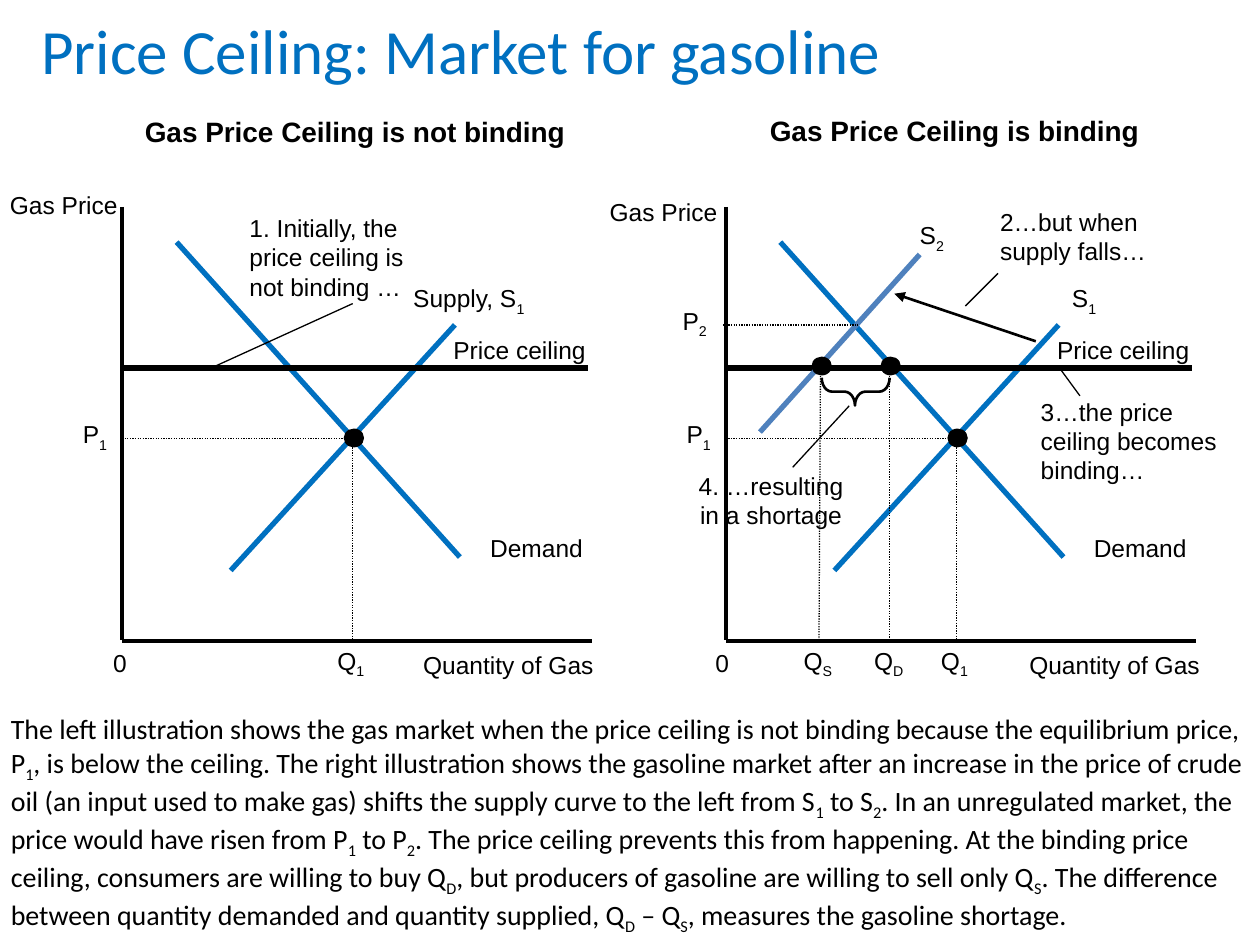
import pptx
import pptx.util
import pptx.dml.color
import pptx.enum.dml
import pptx.enum.shapes
import pptx.enum.text
from pptx.oxml.ns import qn
from lxml import etree

Cm, Pt = pptx.util.Cm, pptx.util.Pt
ALIGN = pptx.enum.text.PP_ALIGN
SHAPE = pptx.enum.shapes.MSO_SHAPE

# Content: lengths in cm; "_" makes the next character a subscript
TITLE = "Price Ceiling: Market for gasoline"
SUMMARY = (
    "The left illustration shows the gas market when the price ceiling is not binding "
    "because the equilibrium price, P_1, is below the ceiling. The right illustration shows "
    "the gasoline market after an increase in the price of crude oil (an input used to make "
    "gas) shifts the supply curve to the left from S_1 to S_2. In an unregulated market, the "
    "price would have risen from P_1 to P_2. The price ceiling prevents this from happening. "
    "At the binding price ceiling, consumers are willing to buy Q_D, but producers of gasoline "
    "are willing to sell only Q_S. The difference between quantity demanded and quantity "
    "supplied, Q_D – Q_S, measures the gasoline shortage."
)
BLACK, BLUE, PALE_BLUE = "000000", "0070C0", "4F81BD"
PANEL_STEP = 12.17
LABEL_H = 0.86
DOT_W, DOT_H = 0.41, 0.38

# Line styles: colour, width in points, dotted, arrowhead
STYLES = {
    "axis": (BLACK, 2.25, False, False),
    "curve": (BLUE, 3, False, False),
    "new supply": (PALE_BLUE, 3, False, False),
    "ceiling": (BLACK, 3, False, False),
    "guide": (BLACK, 0.75, True, False),
    "leader": (BLACK, 0.75, False, False),
    "shift": (BLACK, 1.5, False, True),
}

# Parts of both panels, placed for the left one
PANEL_LINES = [
    ("axis", 2.46, 4.17, 2.46, 12.9),
    ("axis", 2.46, 12.93, 11.94, 12.93),
    ("guide", 2.46, 8.84, 7.11, 8.84),
    ("guide", 7.11, 8.86, 7.11, 12.9),
    ("curve", 3.56, 4.88, 9.27, 11.23),
    ("curve", 4.65, 11.5, 9.17, 6.55),
    ("ceiling", 2.46, 7.42, 11.86, 7.42),
]
PANEL_LABELS = [
    ("Demand", 9.63, 10.62, 2.39),
    ("Price ceiling", 8.89, 6.63, 3.2),
    ("Q_1", 6.55, 12.9, 1.09),
    ("P_1", 1.42, 8.33, 1.04),
]
EQUILIBRIUM = (6.93, 8.64)

# Parts of one panel only
LABELS = [
    ("Gas Price", -0.05, 3.71, 2.69),
    ("Quantity of Gas", 8.28, 12.98, 3.96),
    ("0", 2.03, 12.93, 0.79),
    ("Supply, S_1", 8.08, 5.59, 3.02),
    ("Gas Price", 12.04, 3.84, 2.69),
    ("Quantity of Gas", 20.5, 12.98, 3.96),
    ("0", 14.17, 12.93, 0.79),
    ("S_1", 21.36, 5.59, 1.17),
    ("S_2", 18.29, 4.32, 1.17),
    ("P_2", 13.51, 6.05, 1.04),
    ("Q_S", 15.95, 12.9, 1.12),
    ("Q_D", 17.37, 12.9, 1.14),
]
LINES = [
    ("leader", 4.32, 7.39, 7.11, 6.12),
    ("new supply", 15.32, 8.71, 18.54, 5.13),
    ("guide", 14.58, 6.55, 17.3, 6.55),
    ("guide", 16.54, 7.42, 16.51, 12.9),
    ("guide", 17.93, 7.42, 17.93, 12.9),
    ("leader", 19.46, 6.17, 20.12, 5.51),
    ("shift", 20.88, 6.88, 18.03, 5.92),
    ("leader", 21.77, 7.98, 21.36, 7.42),
    ("leader", 15.98, 9.42, 17.12, 8.18),
]
SHORTAGE_DOTS = [(16.36, 7.19), (17.75, 7.19)]
NOTES = [
    ("1. Initially, the price ceiling is not binding …", 4.78, 4.17, 4.27, 2.06, ALIGN.LEFT),
    ("2…but when supply falls…", 19.91, 4.04, 4.24, 1.45, ALIGN.LEFT),
    ("3…the price ceiling becomes binding…", 20.73, 7.87, 4.27, 2.06, ALIGN.LEFT),
    ("4. …resulting in a shortage", 13.59, 9.37, 3.91, 1.45, ALIGN.CENTER),
]
HEADINGS = [
    ("Gas Price Ceiling is not binding", 2.67, 2.18),
    ("Gas Price Ceiling is binding", 15.27, 2.16),
]


def rgb(value):
    return pptx.dml.color.RGBColor.from_string(value)


def write(p, text, size, font="Arial", color=BLACK, bold=False):
    p.font.name, p.font.size, p.font.bold = font, Pt(size), bold
    p.font.color.rgb = rgb(color)
    first, *rest = text.split("_")
    p.add_run().text = first
    for part in rest:
        r = p.add_run()
        r.text = part[0]
        r._r.get_or_add_rPr().set("baseline", "-25000")
        if part[1:]:
            p.add_run().text = part[1:]


def add_text(s, text, x, y, w, h=LABEL_H, size=14, wrap=True, align=ALIGN.LEFT, **font):
    tf = s.shapes.add_textbox(Cm(x), Cm(y), Cm(w), Cm(h)).text_frame
    tf.word_wrap = wrap
    tf.auto_size = pptx.enum.text.MSO_AUTO_SIZE.SHAPE_TO_FIT_TEXT
    p = tf.paragraphs[0]
    p.alignment = align
    write(p, text, size, **font)


def add_line(s, style, x1, y1, x2, y2):
    color, width, dotted, arrow = STYLES[style]
    line = s.shapes.add_connector(
        pptx.enum.shapes.MSO_CONNECTOR.STRAIGHT, Cm(x1), Cm(y1), Cm(x2), Cm(y2))
    line.line.color.rgb = rgb(color)
    line.line.width = Pt(width)
    if dotted:
        line.line.dash_style = pptx.enum.dml.MSO_LINE.ROUND_DOT
    if arrow:
        etree.SubElement(line.line._get_or_add_ln(), qn("a:tailEnd"), type="triangle")
    etree.SubElement(line._element.spPr, qn("a:effectLst"))


def add_dot(s, x, y):
    dot = s.shapes.add_shape(SHAPE.OVAL, Cm(x), Cm(y), Cm(DOT_W), Cm(DOT_H))
    dot.shadow.inherit = False
    dot.fill.solid()
    dot.fill.fore_color.rgb = rgb(BLACK)
    dot.line.fill.background()


def main():
    prs = pptx.Presentation()
    prs.slide_width, prs.slide_height = Cm(25.4), Cm(19.05)
    s = prs.slides.add_slide(prs.slide_layouts[5])

    # Title
    title = s.shapes.title
    title.left, title.top, title.width, title.height = Cm(0.58), Cm(0.1), Cm(24.56), Cm(1.47)
    tf = title.text_frame
    tf.auto_size = pptx.enum.text.MSO_AUTO_SIZE.NONE
    tf.vertical_anchor = pptx.enum.text.MSO_ANCHOR.TOP
    tf.paragraphs[0].alignment = ALIGN.LEFT
    write(tf.paragraphs[0], TITLE, 36, "Calibri", BLUE)

    # Both market diagrams
    for dx in (0, PANEL_STEP):
        for style, x1, y1, x2, y2 in PANEL_LINES:
            add_line(s, style, x1 + dx, y1, x2 + dx, y2)
        for text, x, y, w in PANEL_LABELS:
            add_text(s, text, x + dx, y, w, wrap=False)
        add_dot(s, EQUILIBRIUM[0] + dx, EQUILIBRIUM[1])

    # Parts that differ between the diagrams
    for line in LINES:
        add_line(s, *line)
    for label in LABELS:
        add_text(s, *label, wrap=False)
    for dot in SHORTAGE_DOTS:
        add_dot(s, *dot)

    # Shortage brace
    brace = s.shapes.add_shape(SHAPE.LEFT_BRACE, Cm(16.97), Cm(7.21), Cm(0.56), Cm(1.37))
    brace.rotation = 270
    brace.adjustments[0], brace.adjustments[1] = 0.37, 0.49
    brace.shadow.inherit = False
    brace.fill.background()
    brace.line.color.rgb = rgb(BLACK)
    brace.line.width = Pt(1.5)

    # Notes, headings and summary
    for text, x, y, w, h, align in NOTES:
        add_text(s, text, x, y, w, h, align=align)
    for text, x, y in HEADINGS:
        add_text(s, text, x, y, 9.04, 0.94, size=16, bold=True)
    add_text(s, SUMMARY, -0.03, 14.22, 25.4, 4.37, size=16, font="Calibri")

    prs.save("out.pptx")


if __name__ == "__main__":
    main()
